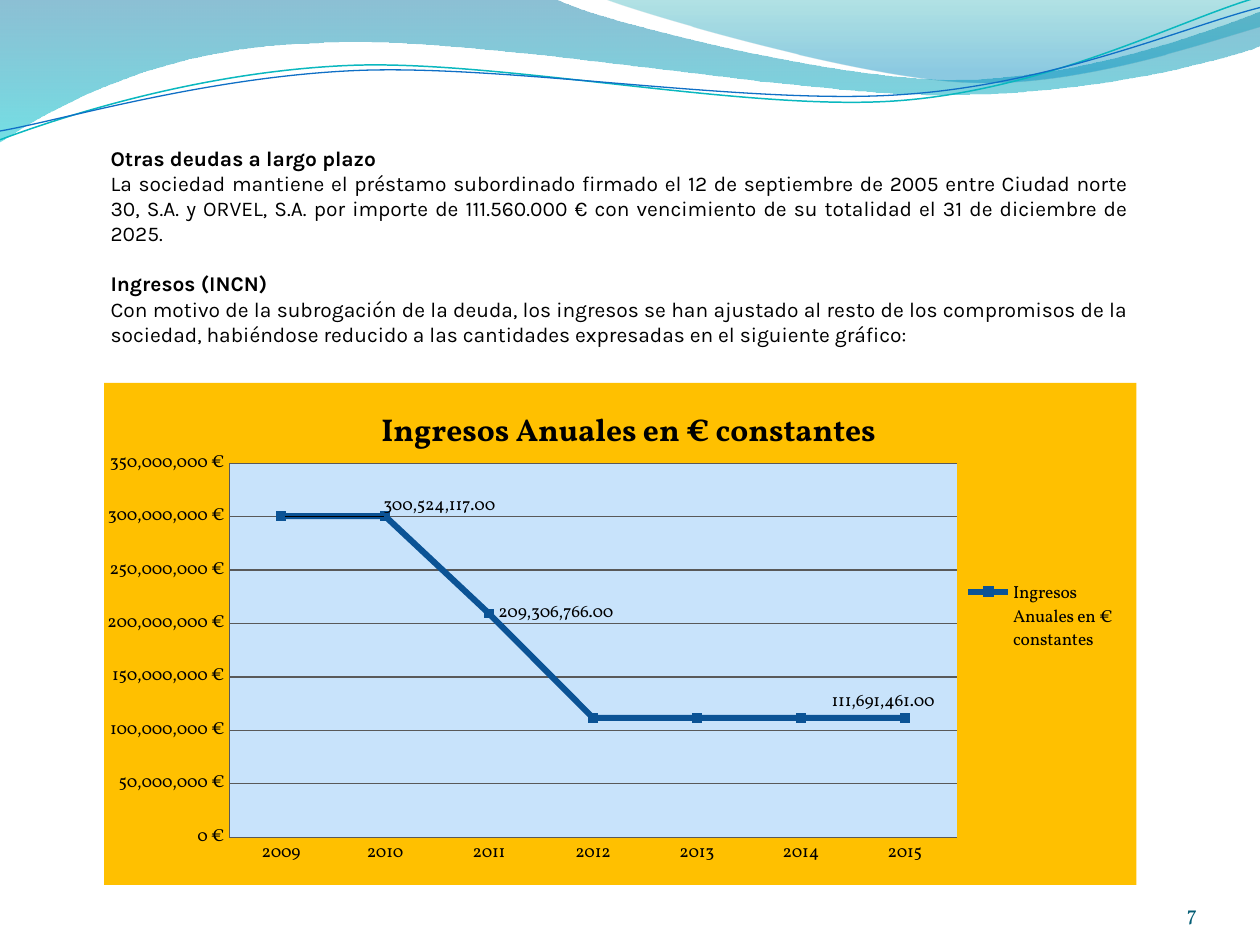
from dataclasses import dataclass

from lxml.etree import SubElement
from pptx import Presentation
from pptx.chart.data import CategoryChartData
from pptx.dml.color import RGBColor
from pptx.enum.chart import (XL_CHART_TYPE, XL_LABEL_POSITION, XL_LEGEND_POSITION,
                             XL_MARKER_STYLE, XL_TICK_MARK)
from pptx.enum.text import MSO_ANCHOR, PP_ALIGN
from pptx.oxml import parse_xml
from pptx.oxml.ns import nsdecls, qn
from pptx.util import Cm, Pt


@dataclass(frozen=True)
class Theme:
    """Colours, fonts and type sizes of the deck."""
    ink: str = "000000"
    number: str = "045D75"
    panel: str = "FFC000"
    plot: str = "C8E3FB"
    series: str = "0B5395"
    grid: str = "595959"
    teal_line: str = "0AB8BF"
    blue_line: str = "0F6FC6"
    body_font: str = "Karla"
    chart_font: str = "Vollkorn"
    body_size: float = 12
    chart_size: float = 10
    title_size: float = 18


THEME = Theme()
BROAD_WAVE = [(0, 0), (4.4, -0.01), (4.76, 0.17, 6.64, 0.63, 7.58, 0.63),
              (8.53, 0.63, 9.58, 0.26, 10, 0.09), (10.01, 0.36),
              (9.83, 0.44, 8.7, 0.76, 7.46, 0.75), (6.22, 0.75, 3.82, 0.28, 2.57, 0.34),
              (1.29, 0.36, 0.46, 0.83, -0.01, 1.13), (0, 0)]
RIGHT_WAVE = [(4.79, -0.01), (5.09, 0.11, 6.82, 0.62, 7.69, 0.65),
              (8.56, 0.69, 9.61, 0.32, 10, 0.21), (10, 0), (4.79, -0.01)]
TEAL_CURVE = [(0, 1.11), (0.48, 0.93, 1.58, 0.57, 2.77, 0.52),
              (3.95, 0.47, 5.93, 0.89, 7.13, 0.8), (8.33, 0.71, 9.38, 0.15, 9.98, -0.02)]
BLUE_CURVE = [(0, 1.04), (0.47, 0.96, 1.64, 0.61, 2.83, 0.56),
              (4.03, 0.51, 5.97, 0.84, 7.17, 0.75), (8.36, 0.67, 9.41, 0.21, 10, 0.06)]
SECTIONS = [
    ("Otras deudas a largo plazo",
     "La sociedad mantiene el préstamo subordinado firmado el 12 de septiembre de 2005 "
     "entre Ciudad norte 30, S.A. y ORVEL, S.A. por importe de 111.560.000 € con "
     "vencimiento de su totalidad el 31 de diciembre de 2025."),
    ("Ingresos (INCN)",
     "Con motivo de la subrogación de la deuda, los ingresos se han ajustado al resto de "
     "los compromisos de la sociedad, habiéndose reducido a las cantidades expresadas en "
     "el siguiente gráfico:"),
]
CHART_NAME = "Ingresos Anuales en € constantes"
YEARS = [str(year) for year in range(2009, 2016)]
INCOME = [300524117] * 2 + [209306766] + [111691461] * 4
LABEL_OFFSETS = {0: (0.09, -0.02), 2: (0, 0), 6: (-0.08, -0.03)}
NO_LEADERS = (f'<c:extLst {nsdecls("c")}><c:ext uri="{{CE6537A1-D6FC-4f65-9D91-7224C49458BB}}" '
              'xmlns:c15="http://schemas.microsoft.com/office/drawing/2012/chart">'
              '<c15:showLeaderLines val="0"/></c:ext></c:extLst>')


def color(value):
    """Turn a hex string into a colour."""
    return RGBColor.from_string(value)


def add_outline(page, steps, closed):
    """Draw a freeform of lines (pairs) and cubic curves (sixes), in inches."""
    points = [tuple(Cm(2.54 * length) for length in step[at:at + 2])
              for step in steps for at in range(0, len(step), 2)]
    builder = page.shapes.build_freeform(*points[0])
    builder.add_line_segments(points[1:], close=closed)
    shape = builder.convert_to_shape()
    shape.shadow.inherit = False
    lines = iter(list(shape._element.iter(qn("a:lnTo"))))
    for step in steps[1:]:
        line = next(lines)
        if len(step) == 6:
            line.addprevious(curve := parse_xml(f'<a:cubicBezTo {nsdecls("a")}/>'))
            for corner in (line, next(lines), next(lines)):
                curve.append(corner[0])
                corner.getparent().remove(corner)
    return shape


def add_wave(page, steps, stops):
    """Add a wave with a translucent vertical gradient."""
    shape = add_outline(page, steps, True)
    shape.line.fill.background()
    stop_xml = "".join(
        f'<a:gs pos="{position * 1000}"><a:srgbClr val="{value}">'
        f'<a:alpha val="{alpha * 1000}"/></a:srgbClr></a:gs>'
        for position, value, alpha in stops)
    shape._element.spPr.find(qn("a:custGeom")).addnext(parse_xml(
        f'<a:gradFill {nsdecls("a")} rotWithShape="1"><a:gsLst>{stop_xml}</a:gsLst>'
        '<a:lin ang="5400000" scaled="0"/></a:gradFill>'))


def add_curve(page, steps, ink, width):
    """Add an open, unfilled curve."""
    shape = add_outline(page, steps, False)
    shape.fill.background()
    shape.line.color.rgb, shape.line.width = color(ink), Pt(width)


def add_box(page, left, top, width, height, anchor):
    """Add a wrapping text box without margins and return its frame."""
    frame = page.shapes.add_textbox(Cm(left), Cm(top), Cm(width), Cm(height)).text_frame
    frame.word_wrap, frame.vertical_anchor = True, anchor
    frame.margin_left = frame.margin_right = frame.margin_top = frame.margin_bottom = 0
    return frame


def set_font(font, size, name, ink=THEME.ink, bold=False):
    """Format a font."""
    font.size, font.name, font.bold = Pt(size), name, bold
    font.color.rgb = color(ink)


def add_text(frame, text, align=PP_ALIGN.JUSTIFY, before=0, size=THEME.body_size,
             name=THEME.body_font, **style):
    """Write one paragraph, filling the first one when it is empty."""
    first = frame.paragraphs[0]
    para = frame.add_paragraph() if first.runs else first
    para.alignment, para.space_before = align, Pt(before)
    span = para.add_run()
    span.text = text
    set_font(span.font, size, name, **style)


def set_layout(element, place, **values):
    """Give a chart part a manual layout at the given child index."""
    for old in element.findall(qn("c:layout")):
        element.remove(old)
    layout = parse_xml(f'<c:layout {nsdecls("c")}><c:manualLayout/></c:layout>')
    for tag, value in values.items():
        SubElement(layout[0], qn(f"c:{tag}")).set("val", str(value))
    element.insert(place, layout)


def area_fill(value):
    """Return borderless fill properties for a chart or plot area."""
    return parse_xml(f'<c:spPr {nsdecls("c", "a")}><a:solidFill><a:srgbClr val="{value}"/>'
                     '</a:solidFill><a:ln><a:noFill/></a:ln></c:spPr>')


def format_axes(chart):
    """Set the scale, grid and lines of both axes."""
    values, years = chart.value_axis, chart.category_axis
    values.minimum_scale, values.maximum_scale, values.major_unit = 0, 350000000, 50000000
    values.tick_labels.number_format = '#,##0\\ "€"'
    values.tick_labels.number_format_is_linked = False
    for part, width in ((values.major_gridlines, 0.75), (values, 0.5), (years, 0.5)):
        part.format.line.color.rgb = color(THEME.grid)
        part.format.line.width = Pt(width)
    for axis in (values, years):
        axis.major_tick_mark = axis.minor_tick_mark = XL_TICK_MARK.NONE


def format_series(series):
    """Style the income line and label its turning points."""
    series.smooth = False
    series.format.line.width = Pt(3.5)
    series.marker.style, series.marker.size = XL_MARKER_STYLE.SQUARE, 5
    series.marker.format.fill.solid()
    for paint in (series.format.line.color, series.marker.format.line.color,
                  series.marker.format.fill.fore_color):
        paint.rgb = color(THEME.series)
    series.data_labels.show_value = False
    for index in LABEL_OFFSETS:
        series.points[index].data_label.position = XL_LABEL_POSITION.RIGHT
    labels = series._element.find(qn("c:dLbls"))
    for label, (x, y) in zip(labels.findall(qn("c:dLbl")), LABEL_OFFSETS.values()):
        set_layout(label, 1, x=x, y=y)
    labels.append(parse_xml(NO_LEADERS))


def add_income_chart(page):
    """Add the line chart of yearly income."""
    data = CategoryChartData(number_format="#,##0.00")
    data.categories = YEARS
    data.add_series(CHART_NAME, INCOME)
    chart = page.shapes.add_chart(XL_CHART_TYPE.LINE_MARKERS_STACKED, Cm(2.1), Cm(7.72),
                                  Cm(20.81), Cm(10.12), data).chart
    set_font(chart.font, THEME.chart_size, THEME.chart_font)
    chart.plots[0].vary_by_categories = False
    add_text(chart.chart_title.text_frame, CHART_NAME, align=PP_ALIGN.CENTER,
             size=THEME.title_size, name=THEME.chart_font, bold=True)
    chart.has_legend = True
    chart.legend.position = XL_LEGEND_POSITION.RIGHT
    chart.legend.include_in_layout = False
    format_axes(chart)
    format_series(chart.series[0])
    plot = chart._chartSpace.chart.plotArea
    chart._chartSpace.chart.addnext(area_fill(THEME.panel))
    plot.append(area_fill(THEME.plot))
    edge = {"xMode": "edge", "yMode": "edge"}
    set_layout(plot, 0, layoutTarget="inner", **edge, x=0.121, y=0.16, w=0.705, h=0.745)
    set_layout(chart.chart_title._element, 1, **edge, x=0.263, y=0.038)
    set_layout(chart.legend._element, 1, **edge, x=0.827, y=0.394, w=0.16, h=0.15)


def main():
    """Build the slide and save it."""
    deck = Presentation()
    deck.slide_width, deck.slide_height = Cm(25.4), Cm(19.05)
    page = deck.slides.add_slide(deck.slide_layouts[6])
    add_wave(page, BROAD_WAVE, [(0, "0074A1", 45), (100, "00C6CF", 55)])
    add_wave(page, RIGHT_WAVE, [(0, "00A1A9", 30), (80, "008BBF", 45)])
    add_curve(page, TEAL_CURVE, THEME.teal_line, 0.85)
    add_curve(page, BLUE_CURVE, THEME.blue_line, 0.75)
    number = add_box(page, 22.02, 17.65, 2.11, 1.02, MSO_ANCHOR.BOTTOM)
    add_text(number, "7", PP_ALIGN.RIGHT, name=THEME.chart_font, ink=THEME.number)
    body = add_box(page, 2.23, 2.77, 20.52, 4.37, MSO_ANCHOR.MIDDLE)
    for index, (heading, text) in enumerate(SECTIONS):
        add_text(body, heading, before=14.3 * index, bold=True)
        add_text(body, text)
    add_income_chart(page)
    deck.save("out.pptx")


if __name__ == "__main__":
    main()
